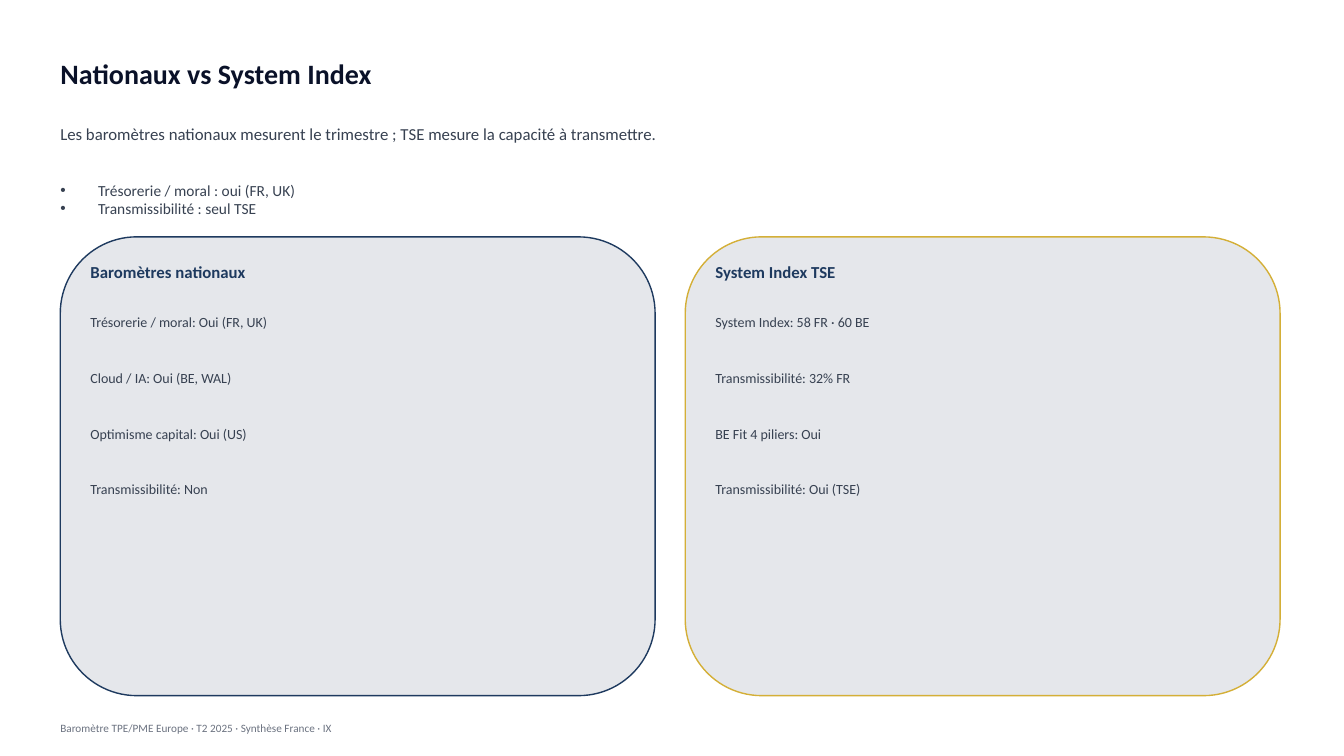
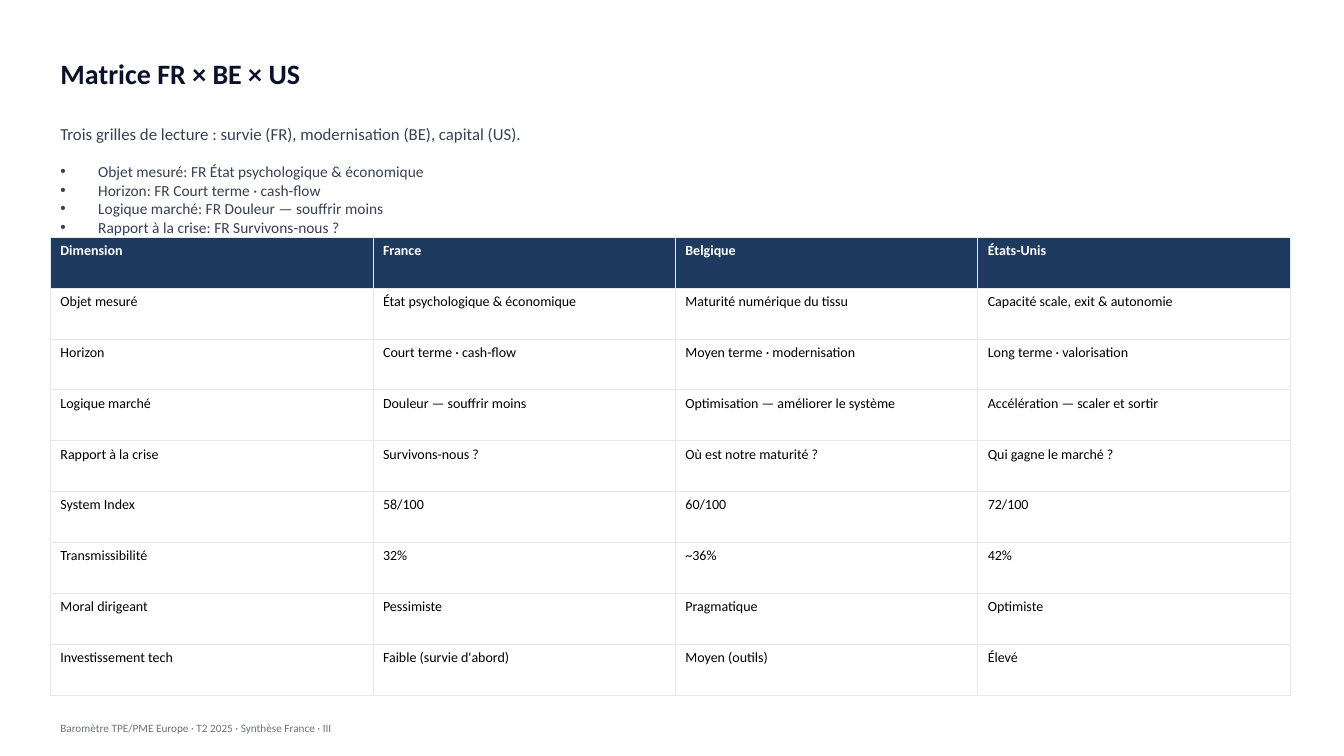
from dataclasses import dataclass

from lxml import etree
from pptx import Presentation
from pptx.dml.color import RGBColor
from pptx.enum.shapes import MSO_SHAPE
from pptx.enum.text import MSO_ANCHOR, MSO_AUTO_SIZE, PP_ALIGN
from pptx.oxml.ns import qn
from pptx.util import Cm, Pt

ROUNDED = MSO_SHAPE.ROUNDED_RECTANGLE
MIDDLE = MSO_ANCHOR.MIDDLE
NO_AUTOFIT = MSO_AUTO_SIZE.NONE
LEFT = PP_ALIGN.LEFT


@dataclass(frozen=True)
class Theme:
    """Colours, type sizes in points and common lengths in centimetres."""
    font: str = "Calibri"
    ink: str = "0A1128"
    body: str = "374151"
    navy: str = "1E3A5F"
    gold: str = "D4AF37"
    panel: str = "E5E7EB"
    muted: str = "6B7280"
    white: str = "FFFFFF"
    black: str = "000000"
    title_size: int = 20
    lead_size: int = 12
    list_size: int = 11
    small_size: int = 10
    footer_size: int = 8
    left: float = 1.27
    width: float = 31.24
    content_top: float = 5.97
    content_height: float = 11.56
    hanging: float = 0.95


THEME = Theme()


def add_bullet(para):
    """Give a paragraph a round bullet with a hanging indent."""
    properties = para._p.get_or_add_pPr()
    properties.set("marL", str(Cm(THEME.hanging)))
    properties.set("indent", str(-Cm(THEME.hanging)))
    etree.SubElement(properties, qn("a:buFont")).set("typeface", "Arial")
    etree.SubElement(properties, qn("a:buChar")).set("char", "•")


def write(frame, *lines, size, color, bold=False, bullet=False):
    """Fill a text frame with one formatted paragraph per line."""
    for index, line in enumerate(lines):
        para = frame.add_paragraph() if index else frame.paragraphs[0]
        if bullet:
            add_bullet(para)
        para.alignment = LEFT
        para.space_before = Pt(0)
        span = para.add_run()
        span.text = line
        span.font.name = THEME.font
        span.font.size = Pt(size)
        span.font.bold = bold
        span.font.color.rgb = RGBColor.from_string(color)


def set_borders(cell, color, width):
    """Draw the four sides of a table cell."""
    properties = cell._tc.get_or_add_tcPr()
    for side in ("a:lnL", "a:lnR", "a:lnT", "a:lnB"):
        line = etree.SubElement(properties, qn(side), w=str(Pt(width)))
        fill = etree.SubElement(line, qn("a:solidFill"))
        etree.SubElement(fill, qn("a:srgbClr"), val=color)


class DeckBuilder:
    def __init__(self):
        self.deck = Presentation()
        self.deck.slide_width = Cm(33.87)
        self.deck.slide_height = Cm(19.05)
        self.page = None

    def place(self, box, left, top, width, height):
        box.left, box.top = Cm(left), Cm(top)
        box.width, box.height = Cm(width), Cm(height)
        frame = box.text_frame
        frame.word_wrap = True
        frame.auto_size = NO_AUTOFIT
        frame.vertical_anchor = MIDDLE
        return frame

    def add_text(self, text, left, top, width, height, **style):
        box = self.page.shapes.add_textbox(0, 0, 0, 0)
        write(self.place(box, left, top, width, height), text, **style)

    def add_page(self, title, lead, points, number):
        """Start a slide with its title, lead sentence, list and footer."""
        self.page = self.deck.slides.add_slide(self.deck.slide_layouts[1])
        left, width = THEME.left, THEME.width
        heading = self.place(self.page.shapes.title, left, 1.02, width, 1.65)
        write(heading, title, size=THEME.title_size, color=THEME.ink,
              bold=True)
        self.add_text(lead, left, 2.67, width, 1.4,
                      size=THEME.lead_size, color=THEME.body)
        body = self.place(self.page.placeholders[1], left, 3.94, width, 2.16)
        write(body, *points, size=THEME.list_size, color=THEME.body,
              bullet=True)
        self.add_text(
            f"Baromètre TPE/PME Europe · T2 2025 · Synthèse France · {number}",
            left, 17.91, width, 0.89,
            size=THEME.footer_size, color=THEME.muted)

    def add_panel(self, left, outline, heading, lines):
        """Add a rounded panel with a heading and evenly spaced lines."""
        width, inset = 14.99, 0.51
        panel = self.page.shapes.add_shape(
            ROUNDED, Cm(left), Cm(THEME.content_top),
            Cm(width), Cm(THEME.content_height))
        panel.shadow.inherit = False
        panel.fill.solid()
        panel.fill.fore_color.rgb = RGBColor.from_string(THEME.panel)
        panel.line.color.rgb = RGBColor.from_string(outline)
        panel.line.width = Pt(1)

        text_left, text_width = left + inset, width - 2 * inset
        self.add_text(heading, text_left, 6.35, text_width, 1.02,
                      size=THEME.lead_size, color=THEME.navy, bold=True)
        for index, line in enumerate(lines):
            self.add_text(line, text_left, 7.49 + 1.4 * index, text_width,
                          1.27, size=THEME.small_size, color=THEME.body)

    def add_table(self, rows, column_widths):
        """Add a bordered table whose first row is a navy header."""
        table = self.page.shapes.add_table(
            len(rows), len(column_widths), Cm(THEME.left),
            Cm(THEME.content_top), Cm(THEME.width),
            Cm(THEME.content_height)).table
        table.horz_banding = False
        for column, width in zip(table.columns, column_widths):
            column.width = Cm(width)
        for row_index, values in enumerate(rows):
            header = row_index == 0
            for column_index, value in enumerate(values):
                cell = table.cell(row_index, column_index)
                set_borders(cell, THEME.panel, 0.5)
                if header:
                    cell.fill.solid()
                    cell.fill.fore_color.rgb = RGBColor.from_string(THEME.navy)
                else:
                    cell.fill.background()
                write(cell.text_frame, value, size=THEME.small_size,
                      color=THEME.white if header else THEME.black,
                      bold=header)


def main():
    builder = DeckBuilder()

    # Comparison of the national barometers and the index
    builder.add_page(
        "Nationaux vs System Index",
        "Les baromètres nationaux mesurent le trimestre ; "
        "TSE mesure la capacité à transmettre.",
        ["Trésorerie / moral : oui (FR, UK)", "Transmissibilité : seul TSE"],
        "IX")
    panels = [
        (THEME.navy, "Baromètres nationaux",
         ["Trésorerie / moral: Oui (FR, UK)", "Cloud / IA: Oui (BE, WAL)",
          "Optimisme capital: Oui (US)", "Transmissibilité: Non"]),
        (THEME.gold, "System Index TSE",
         ["System Index: 58 FR · 60 BE", "Transmissibilité: 32% FR",
          "BE Fit 4 piliers: Oui", "Transmissibilité: Oui (TSE)"]),
    ]
    for index, panel in enumerate(panels):
        builder.add_panel(1.52 + 15.75 * index, *panel)

    # Country matrix
    rows = [
        ("Dimension", "France", "Belgique", "États-Unis"),
        ("Objet mesuré", "État psychologique & économique",
         "Maturité numérique du tissu", "Capacité scale, exit & autonomie"),
        ("Horizon", "Court terme · cash-flow", "Moyen terme · modernisation",
         "Long terme · valorisation"),
        ("Logique marché", "Douleur — souffrir moins",
         "Optimisation — améliorer le système",
         "Accélération — scaler et sortir"),
        ("Rapport à la crise", "Survivons-nous ?", "Où est notre maturité ?",
         "Qui gagne le marché ?"),
        ("System Index", "58/100", "60/100", "72/100"),
        ("Transmissibilité", "32%", "~36%", "42%"),
        ("Moral dirigeant", "Pessimiste", "Pragmatique", "Optimiste"),
        ("Investissement tech", "Faible (survie d'abord)", "Moyen (outils)",
         "Élevé"),
    ]
    builder.add_page(
        "Matrice FR × BE × US",
        "Trois grilles de lecture : survie (FR), modernisation (BE), "
        "capital (US).",
        [f"{row[0]}: FR {row[1]}" for row in rows[1:5]],
        "III")
    builder.add_table(rows, (8.13, 7.62, 7.62, 7.87))

    builder.deck.save("out.pptx")


if __name__ == "__main__":
    main()
